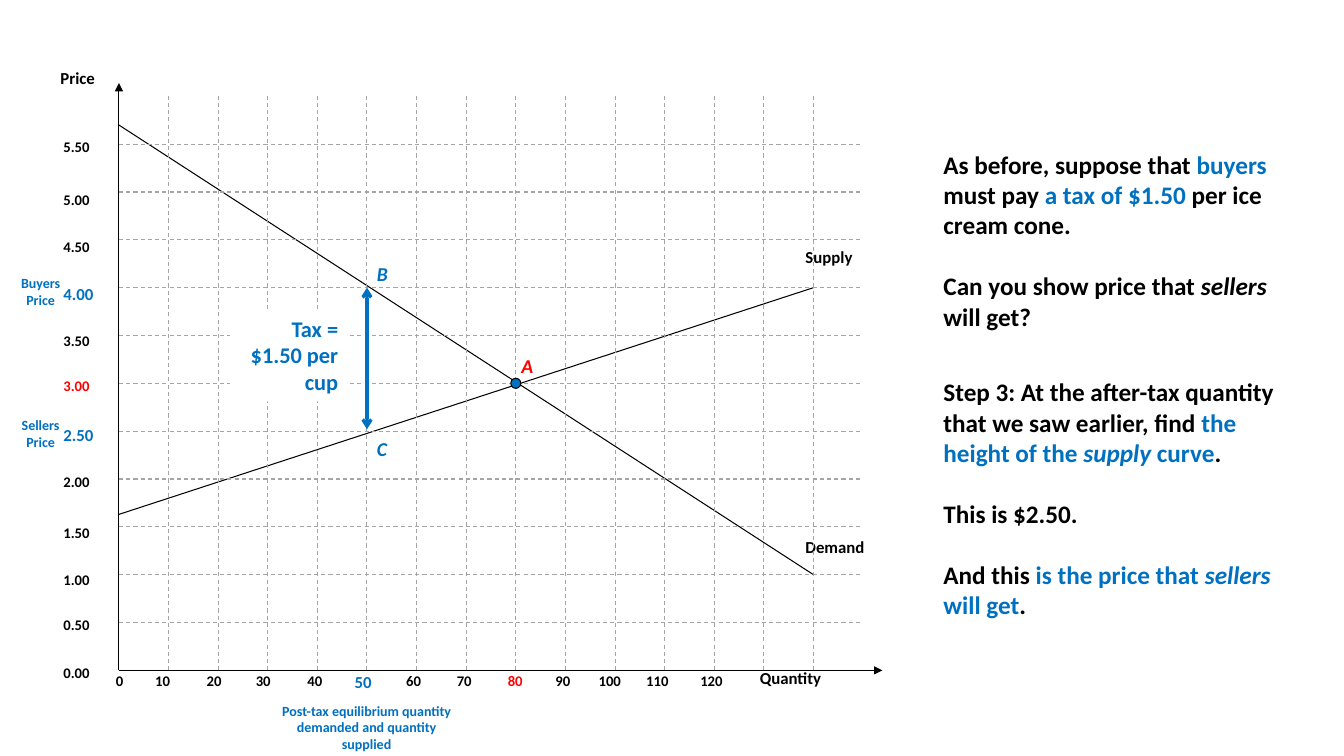
from dataclasses import dataclass

from pptx import Presentation
from pptx.dml.color import RGBColor
from pptx.enum.dml import MSO_LINE
from pptx.enum.shapes import MSO_CONNECTOR, MSO_SHAPE
from pptx.enum.text import PP_ALIGN
from pptx.oxml.ns import qn
from pptx.util import Inches, Pt
from lxml.etree import SubElement


@dataclass(frozen=True)
class Theme:
    font: str = "Calibri"
    black: str = "000000"
    blue: str = "0070C0"
    red: str = "FF0000"
    grey: str = "A5A5A5"
    white: str = "FFFFFF"
    note: float = 10
    tick: float = 10.5
    label: float = 12
    point: float = 14
    tax: float = 16
    body: float = 18
    body_gap: float = 22
    thin: float = 0.75
    thick: float = 2.25


T = Theme()

# The chart's own scale places everything: quantity across, price up.
ORIGIN_X, ORIGIN_Y = 1.18, 6.65
COLUMN, ROW = 0.492, 0.4745
QUANTITY_STEP, PRICE_STEP = 10, 0.5

# Tick label: left edge in quantity, or top edge in price
QUANTITY_TICKS = {
    "0": -2.6, "10": 5.3, "20": 15.7, "30": 25.6, "40": 36, "50": 45.5, "60": 55.9,
    "70": 66.1, "80": 76.4, "90": 86, "100": 94.7, "110": 104.3, "120": 115.2,
}
PRICE_TICKS = {
    "0.00": 0.12, "0.50": 0.62, "1.00": 1.09, "1.50": 1.58, "2.00": 2.12, "2.50": 2.62,
    "3.00": 3.12, "3.50": 3.59, "4.00": 4.09, "4.50": 4.57, "5.00": 5.06, "5.50": 5.62,
}
TICK_STYLES = {
    **dict.fromkeys(("50", "2.50", "4.00"), (T.label, T.blue)),
    **dict.fromkeys(("80", "3.00"), (T.tick, T.red)),
}

QUESTION = [
    [("As before, suppose that ", T.black), ("buyers", T.blue), (" must pay ", T.black),
     ("a tax of $1.50 ", T.blue), ("per ice cream cone.", T.black)],
    [("Can you show price that ", T.black), ("sellers", T.black, True),
     (" will get?", T.black)],
]
ANSWER = [
    [("Step 3: At the after-tax quantity that we saw earlier, find ", T.black),
     ("the height of the ", T.blue), ("supply", T.blue, True), (" curve", T.blue),
     (".", T.black)],
    [("This is $2.50.", T.black)],
    [("And this ", T.black), ("is the price that ", T.blue), ("sellers", T.blue, True),
     (" will get", T.blue), (".", T.black)],
]


def rgb(color):
    return RGBColor.from_string(color)


def width(quantity):
    return Inches(quantity / QUANTITY_STEP * COLUMN)


def height(price):
    return Inches(price / PRICE_STEP * ROW)


def x(quantity):
    return Inches(ORIGIN_X) + width(quantity)


def y(price):
    return Inches(ORIGIN_Y) - height(price)


def add_line(slide, start, end, color=T.black, weight=T.thin, dashed=False, head=None, tail=None):
    """Join two (quantity, price) points; head is the arrow at start, tail at end."""
    line = slide.shapes.add_connector(
        MSO_CONNECTOR.STRAIGHT, x(start[0]), y(start[1]), x(end[0]), y(end[1]))
    line.line.color.rgb = rgb(color)
    line.line.width = Pt(weight)
    if dashed:
        line.line.dash_style = MSO_LINE.DASH
    ln = line.line._get_or_add_ln()
    for tag, kind in (("a:headEnd", head), ("a:tailEnd", tail)):
        if kind:
            SubElement(ln, qn(tag), type=kind)
    SubElement(line._element.spPr, qn("a:effectLst"))


def add_run(p, text, size, color, italic=False):
    r = p.add_run()
    r.text = text
    r.font.name = T.font
    r.font.size = Pt(size)
    r.font.bold = True
    r.font.italic = italic
    r.font.color.rgb = rgb(color)


def add_text(slide, left, top, w, h, paragraphs, size, align=PP_ALIGN.LEFT, fill=None):
    """Place paragraphs of (text, color, italic) runs in a box measured on the chart's scale."""
    sp = slide.shapes.add_textbox(x(left), y(top), width(w), height(h))
    if fill:
        sp.fill.solid()
        sp.fill.fore_color.rgb = rgb(fill)
    tf = sp.text_frame
    tf.word_wrap = True
    for i, runs in enumerate(paragraphs):
        p = tf.add_paragraph() if i else tf.paragraphs[0]
        p.alignment = align
        if i:
            p.space_before = Pt(T.body_gap)
        for text, color, *italic in runs:
            add_run(p, text, size, color, *italic)


def add_label(slide, text, left, top, w=12, h=0.38, size=T.label, color=T.black,
              italic=False, **style):
    add_text(slide, left, top, w, h, [[(text, color, italic)]], size, **style)


def add_axes(slide):
    add_line(slide, (0, 0), (0, 6.14), tail="triangle")
    add_line(slide, (0, 0), (153.9, 0), tail="triangle")
    add_label(slide, "Price", -13.8, 6.35, w=13.6)
    add_label(slide, "Quantity", 127.2, 0.08, w=31.5)


def add_curves(slide):
    add_line(slide, (0, 5.7), (140, 1))
    add_line(slide, (0, 1.63), (140, 4))
    add_label(slide, "Supply", 136.4, 4.48, w=27)
    add_label(slide, "Demand", 136.4, 1.45, w=27)


def add_grid(slide):
    for row in range(1, 12):
        price = row * PRICE_STEP
        add_line(slide, (0, price), (150, price), T.grey, dashed=True)
    for column in range(1, 15):
        quantity = column * QUANTITY_STEP
        add_line(slide, (quantity, 0), (quantity, 6), T.grey, dashed=True)


def add_ticks(slide):
    places = [(text, -13.2, top) for text, top in PRICE_TICKS.items()]
    places += [(text, left, 0.04) for text, left in QUANTITY_TICKS.items()]
    for text, left, top in places:
        size, color = TICK_STYLES.get(text, (T.tick, T.black))
        add_label(slide, text, left, top, size=size, color=color)


def add_equilibrium(slide, quantity, price):
    size = Inches(0.1)
    dot = slide.shapes.add_shape(
        MSO_SHAPE.OVAL, x(quantity) - size // 2, y(price) - size // 2, size, size)
    dot.shadow.inherit = False
    dot.fill.solid()
    dot.fill.fore_color.rgb = rgb(T.blue)
    dot.line.color.rgb = rgb(T.black)
    dot.line.width = Pt(T.thin)


def add_tax_wedge(slide):
    add_label(slide, "Post-tax equilibrium quantity demanded and quantity supplied",
              30.1, -0.28, 39.6, 0.53, T.note, T.blue, align=PP_ALIGN.CENTER)
    add_line(slide, (50, 4), (50, 2.52), T.blue, T.thick, head="arrow", tail="arrow")
    add_label(slide, "Tax = $1.50 per cup", 22.4, 3.77, 23.8, 0.96, T.tax, T.blue,
              align=PP_ALIGN.RIGHT, fill=T.white)
    for text, left, top, color in (("A", 79.1, 3.36, T.red), ("B", 50, 4.32, T.blue),
                                   ("C", 50, 2.49, T.blue)):
        add_label(slide, text, left, top, 8.7, size=T.point, color=color, italic=True)
    for text, top in (("Buyers Price", 4.19), ("Sellers Price", 2.7)):
        add_label(slide, text, -21.9, top, 12.2, 0.53, T.note, T.blue, align=PP_ALIGN.CENTER)


def main():
    prs = Presentation()
    prs.slide_width, prs.slide_height = Inches(13.33), Inches(7.5)
    slide = prs.slides.add_slide(prs.slide_layouts[6])
    add_axes(slide)
    add_curves(slide)
    add_grid(slide)
    add_ticks(slide)
    add_equilibrium(slide, 80, 3)
    add_text(slide, 164.2, 5.5, 73.8, 2.02, QUESTION, T.body)
    add_text(slide, 164.2, 3.12, 73.8, 2.66, ANSWER, T.body)
    add_tax_wedge(slide)
    prs.save("out.pptx")


if __name__ == "__main__":
    main()
